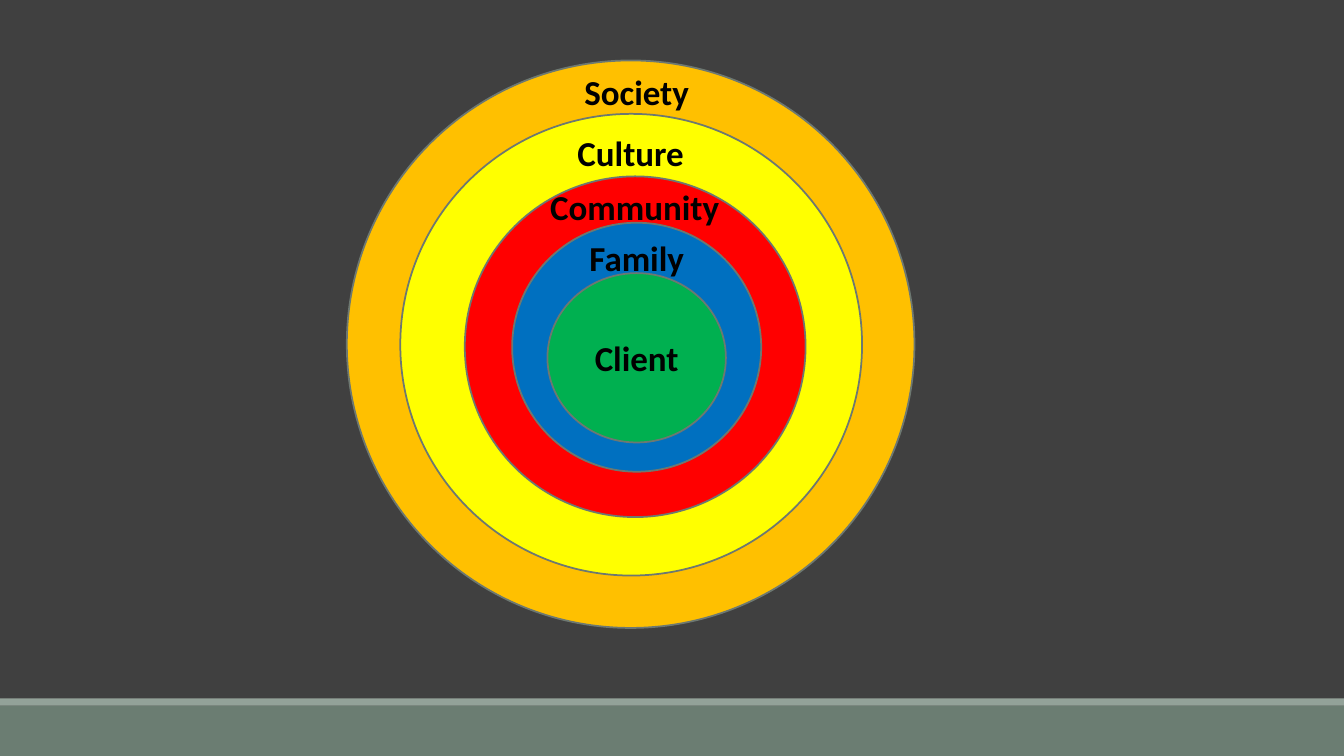
from pptx import Presentation
from pptx.dml.color import RGBColor
from pptx.enum.shapes import MSO_SHAPE
from pptx.enum.text import MSO_ANCHOR, PP_ALIGN
from pptx.util import Inches, Pt

OVAL, RECTANGLE = MSO_SHAPE.OVAL, MSO_SHAPE.RECTANGLE
CENTER, MIDDLE = PP_ALIGN.CENTER, MSO_ANCHOR.MIDDLE

COLORS = {
    "background": "404040", "band": "6B7D72", "strip": "93A299",
    "outline": "6D7871", "text": "000000",
    "orange": "FFC000", "yellow": "FFFF00", "red": "FF0000",
    "blue": "0070C0", "green": "00B050",
}

# Left, top, width, height in inches
FOOTER = [("band", (0, 7, 13.33, 0.5)), ("strip", (0, 6.93, 13.33, 0.07))]

# Outermost first: color, left, top, diameter
RINGS = [
    ("orange", 3.44, 0.6, 5.63),
    ("yellow", 3.97, 1.13, 4.58),
    ("red", 4.61, 1.75, 3.38),
    ("blue", 5.08, 2.21, 2.47),
]
# Text, left, top
RING_LABELS = [
    ("Society", 4.58, 0.65),
    ("Culture", 4.52, 1.26),
    ("Community", 4.56, 1.79),
    ("Family", 4.58, 2.3),
]
LABEL_SIZE = (3.47, 0.52)
CORE_LABEL, CORE_BOUNDS = "Client", (5.43, 2.71, 1.77, 1.68)


def color(name):
    return RGBColor.from_string(COLORS[name])


def add_filled(page, kind, fill, bounds, outline=None):
    shape = page.shapes.add_shape(kind, *map(Inches, bounds))
    shape.shadow.inherit = False
    shape.fill.solid()
    shape.fill.fore_color.rgb = color(fill)
    if outline:
        shape.line.color.rgb = color(outline)
        shape.line.width = Pt(1.25)
    else:
        shape.line.fill.background()
    return shape


def write_label(shape, text):
    frame = shape.text_frame
    frame.word_wrap = True
    para = frame.paragraphs[0]
    para.text = text
    para.alignment = CENTER
    para.font.name = "Calibri"
    para.font.size = Pt(25)
    para.font.bold = True
    para.font.color.rgb = color("text")


deck = Presentation()
deck.slide_width, deck.slide_height = Inches(13.33), Inches(7.5)
page = deck.slides.add_slide(deck.slide_layouts[6])
page.background.fill.solid()
page.background.fill.fore_color.rgb = color("background")

# Footer bars
for fill, bounds in FOOTER:
    add_filled(page, RECTANGLE, fill, bounds)

# Nested rings, then their labels
for fill, left, top, diameter in RINGS:
    add_filled(page, OVAL, fill, (left, top, diameter, diameter), "outline")
for text, left, top in RING_LABELS:
    box = page.shapes.add_textbox(*map(Inches, (left, top, *LABEL_SIZE)))
    write_label(box, text)

# Core circle
core = add_filled(page, OVAL, "green", CORE_BOUNDS, "outline")
core.text_frame.vertical_anchor = MIDDLE
write_label(core, CORE_LABEL)

deck.save("out.pptx")
